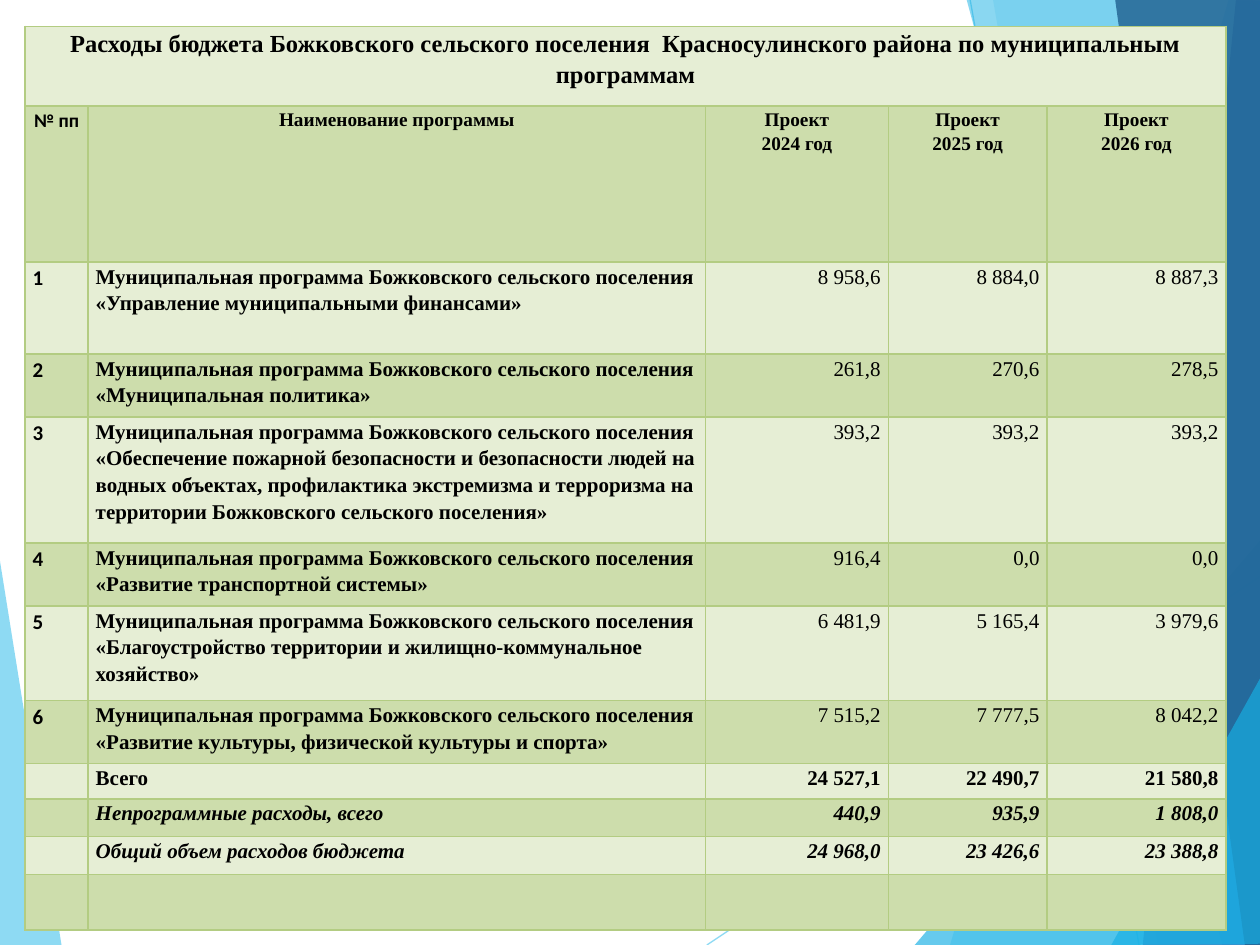
from lxml.etree import SubElement
from pptx import Presentation
from pptx.dml.color import RGBColor
from pptx.enum.shapes import MSO_CONNECTOR
from pptx.enum.text import PP_ALIGN
from pptx.oxml.ns import qn
from pptx.util import Inches, Pt

GRID_COLUMNS, GRID_ROWS = 10, 7.5
SERIF, SANS = "Times New Roman", "Calibri"
LIGHT, DARK, BORDER = "E6EED5", "CDDDAC", "B3CC82"
SKY = "5FCBEF"

LEFT_WEDGE = ([(-0.01, 4.39), (0.49, 7.51), (-0.01, 7.5)], SKY, 70)
RAYS = [((5.61, 7.5), (10.01, 4.57)), ((7.7, 0), (9.04, 7.5))]
RIGHT_FACETS = [
    ([(9.75, 0), (7.54, 7.5), (10.02, 7.51), (10.01, 0.01)], SKY, 36),
    ([(7.88, -0.01), (9.19, 7.5), (10.01, 7.5), (10.01, -0.01)], SKY, 20),
    ([(7.26, 7.5), (10, 4.29), (10.01, 7.5)], "17B0E4", 66),
    ([(7.67, -0.01), (9.7, 7.5), (10.01, 7.49), (10.01, -0.01)], "17B0E4", 50),
    ([(9.81, -0.01), (9.07, 7.5), (10.01, 7.5), (10, -0.01)], "2E83C3", 70),
    ([(8.85, -0.01), (9.88, 7.5), (10.02, 7.5), (10, -0.01)], "226292", 82),
    ([(8.82, 7.5), (10.02, 5.35), (10.02, 7.49)], "17B0E4", 66),
]

COLUMN_SHARES = [0.5, 4.9, 1.45, 1.26, 1.42]
ROW_SHARES = [0.63, 1.24, 0.73, 0.5, 1, 0.5, 0.75, 0.5, 0.28, 0.3, 0.3, 0.44]
TITLE = "Расходы бюджета Божковского сельского поселения  Красносулинского района по муниципальным программам"
HEADER = ["№ пп", "Наименование программы"] + [f"Проект\n{year} год" for year in (2024, 2025, 2026)]
PROGRAM_PREFIX = "Муниципальная программа Божковского сельского поселения"
PROGRAMS = [
    ("Управление муниципальными финансами", "8 958,6", "8 884,0", "8 887,3"),
    ("Муниципальная политика", "261,8", "270,6", "278,5"),
    ("Обеспечение пожарной безопасности и безопасности людей на водных объектах, "
     "профилактика экстремизма и терроризма на территории Божковского сельского поселения",
     "393,2", "393,2", "393,2"),
    ("Развитие транспортной системы", "916,4", "0,0", "0,0"),
    ("Благоустройство территории и жилищно-коммунальное хозяйство", "6 481,9", "5 165,4", "3 979,6"),
    ("Развитие культуры, физической культуры и спорта", "7 515,2", "7 777,5", "8 042,2"),
]
TOTALS = [
    ("Всего", "24 527,1", "22 490,7", "21 580,8"),
    ("Непрограммные расходы, всего", "440,9", "935,9", "1 808,0"),
    ("Общий объем расходов бюджета", "24 968,0", "23 426,6", "23 388,8"),
]


def color(hex_string):
    """Return the colour for a hex string."""
    return RGBColor.from_string(hex_string)


def set_opacity(color_format, percent):
    """Make a solid colour partly transparent."""
    solid_fill = color_format._xFill
    SubElement(solid_fill[0], qn("a:alpha"), val=str(percent * 1000))


def grid_point(box, column, row):
    """Convert a grid position to slide units inside the box."""
    left, top, width, height = box
    return round(left + width * column / GRID_COLUMNS), round(top + height * row / GRID_ROWS)


def add_facet(slide, box, points, fill_color, opacity):
    """Add one translucent polygon."""
    start, *others = [grid_point(box, *point) for point in points]
    builder = slide.shapes.build_freeform(*start)
    builder.add_line_segments(others, close=True)
    facet = builder.convert_to_shape()
    facet.shadow.inherit = False
    facet.line.fill.background()
    facet.fill.solid()
    facet.fill.fore_color.rgb = color(fill_color)
    set_opacity(facet.fill.fore_color, opacity)


def add_ray(slide, box, start, end):
    """Add one thin translucent line."""
    ray = slide.shapes.add_connector(
        MSO_CONNECTOR.STRAIGHT, *grid_point(box, *start), *grid_point(box, *end))
    ray.line.width = Pt(0.75)
    ray.line.color.rgb = color(SKY)
    set_opacity(ray.line.fill.fore_color, 70)
    SubElement(ray._element.spPr, qn("a:effectLst"))


def add_backdrop(slide, box):
    """Draw the blue facets and rays behind the table."""
    add_facet(slide, box, *LEFT_WEDGE)
    for start, end in RAYS:
        add_ray(slide, box, start, end)
    for facet in RIGHT_FACETS:
        add_facet(slide, box, *facet)


def style_cell(cell, fill_color):
    """Set the borders, fill and margins of a cell."""
    properties = cell._tc.get_or_add_tcPr()
    for side in ("a:lnL", "a:lnR", "a:lnT", "a:lnB"):
        border = SubElement(properties, qn(side), w=str(Pt(1)))
        SubElement(SubElement(border, qn("a:solidFill")), qn("a:srgbClr"), val=BORDER)
    cell.fill.solid()
    cell.fill.fore_color.rgb = color(fill_color)
    cell.margin_left = cell.margin_right = Inches(0.06)
    cell.margin_top = cell.margin_bottom = 0


def write_cell(cell, text, alignment, size=12, font_name=SERIF, bold=True, italic=False):
    """Write formatted text into a cell."""
    cell.text_frame.text = text
    for paragraph in cell.text_frame.paragraphs:
        paragraph.alignment = alignment
        paragraph.line_spacing = 1.15
        for run in paragraph.runs:
            run.font.size = Pt(size)
            run.font.name = font_name
            run.font.bold = bold
            run.font.italic = italic
            run.font.color.rgb = color("000000")
        if not paragraph.runs:
            SubElement(paragraph._p, qn("a:endParaRPr"), sz=str(size * 100))


def write_row(table, row, texts, bold_values=True, italic=False):
    """Write a number, a name and three yearly amounts."""
    number, name, *amounts = texts
    write_cell(table.cell(row, 0), number, PP_ALIGN.LEFT, font_name=SANS)
    write_cell(table.cell(row, 1), name, PP_ALIGN.LEFT, italic=italic)
    for column, amount in enumerate(amounts, start=2):
        write_cell(table.cell(row, column), amount, PP_ALIGN.RIGHT, bold=bold_values, italic=italic)


def add_budget_table(slide, box):
    """Add the table of spending by programme."""
    _, _, width, height = box
    table = slide.shapes.add_table(len(ROW_SHARES), len(COLUMN_SHARES), *box).table
    table.first_row = table.horz_banding = False
    for column, share in zip(table.columns, COLUMN_SHARES):
        column.width = round(width * share / sum(COLUMN_SHARES))
    for index, (row, share) in enumerate(zip(table.rows, ROW_SHARES)):
        row.height = round(height * share / sum(ROW_SHARES))
        for cell in row.cells:
            style_cell(cell, DARK if index % 2 else LIGHT)

    table.cell(0, 0).merge(table.cell(0, len(COLUMN_SHARES) - 1))
    write_cell(table.cell(0, 0), TITLE, PP_ALIGN.CENTER, size=14)
    for column, text in enumerate(HEADER):
        write_cell(table.cell(1, column), text, PP_ALIGN.CENTER, size=11,
                   font_name=SERIF if column else SANS)
    for number, (name, *amounts) in enumerate(PROGRAMS, start=1):
        texts = [str(number), f"{PROGRAM_PREFIX} «{name}»", *amounts]
        write_row(table, number + 1, texts, bold_values=False)
    for index, texts in enumerate(TOTALS):
        write_row(table, len(PROGRAMS) + 2 + index, ["", *texts], italic=index > 0)
    write_row(table, len(ROW_SHARES) - 1, [""] * len(COLUMN_SHARES))


def main():
    """Build and save the presentation."""
    presentation = Presentation()
    presentation.slide_width = Inches(10)
    presentation.slide_height = Inches(7.5)
    slide = presentation.slides.add_slide(presentation.slide_layouts[6])
    slide_box = (0, 0, presentation.slide_width, presentation.slide_height)
    add_backdrop(slide, slide_box)
    left, top = grid_point(slide_box, 0.2, 0.21)
    width, height = grid_point(slide_box, sum(COLUMN_SHARES), sum(ROW_SHARES))
    add_budget_table(slide, (left, top, width, height))
    presentation.save("out.pptx")


if __name__ == "__main__":
    main()
